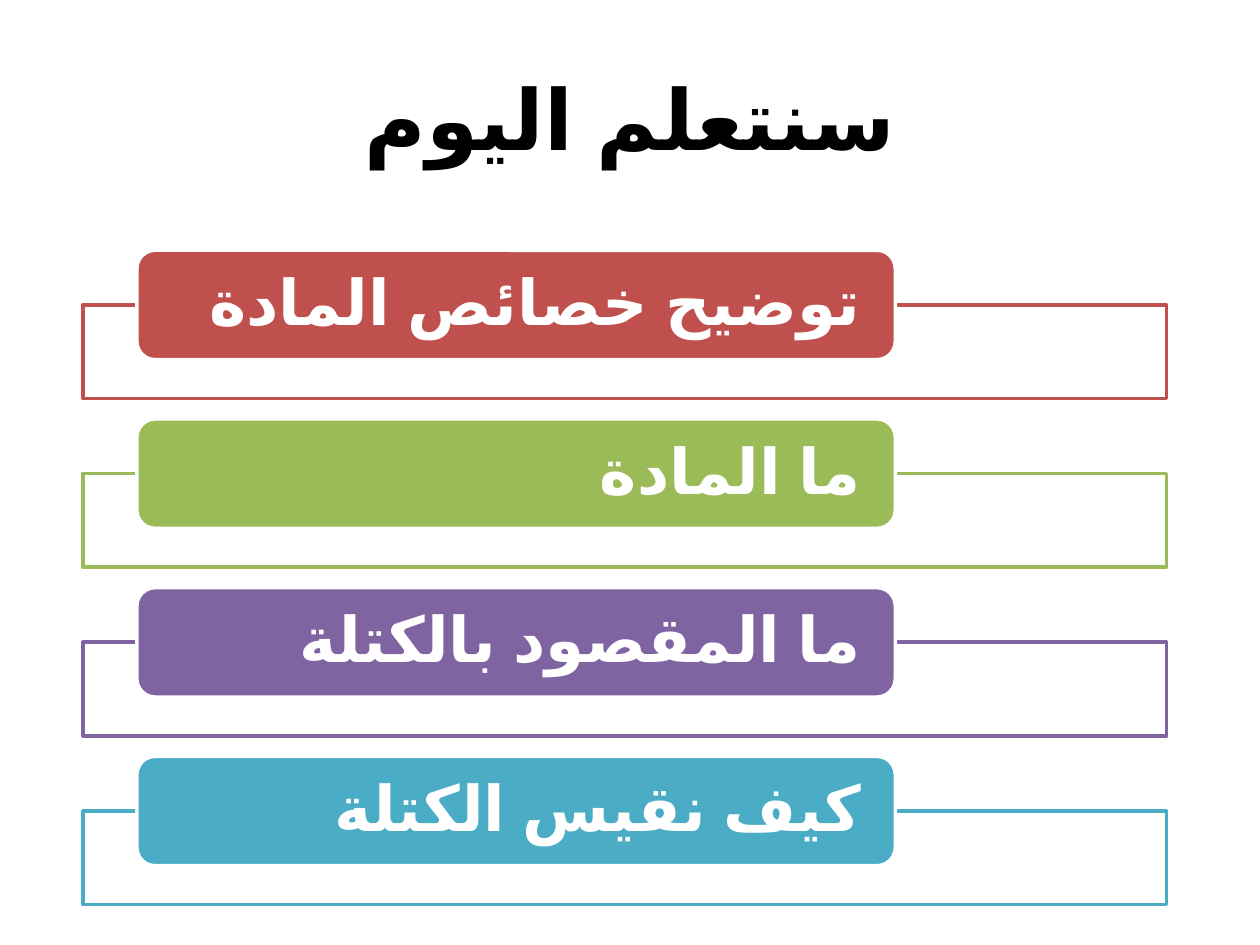
import pptx
import pptx.util
import pptx.dml.color
import pptx.enum.lang
import pptx.enum.shapes
import pptx.enum.text
import pptx.oxml.ns
import lxml.etree

Pt = pptx.util.Pt
RGB = pptx.dml.color.RGBColor
KIND = pptx.enum.shapes.MSO_SHAPE
ALIGN = pptx.enum.text.PP_ALIGN
qn = pptx.oxml.ns.qn

BLACK = RGB(0x00, 0x00, 0x00)
WHITE = RGB(0xFF, 0xFF, 0xFF)
RED = RGB(0xC0, 0x50, 0x4D)
GREEN = RGB(0x9B, 0xBB, 0x59)
PURPLE = RGB(0x80, 0x64, 0xA2)
TEAL = RGB(0x4B, 0xAC, 0xC6)


def write(shape, text, size, color, align, inset=7.2, edge=3.6, spacing=None):
    frame = shape.text_frame
    frame.word_wrap = True
    frame.vertical_anchor = pptx.enum.text.MSO_ANCHOR.MIDDLE
    frame.margin_left = frame.margin_right = Pt(inset)
    frame.margin_top = frame.margin_bottom = Pt(edge)
    para = frame.paragraphs[0]
    para.alignment = align
    para.line_spacing = spacing
    para._p.get_or_add_pPr().set("rtl", "1")
    run = para.add_run()
    run.text = text
    run.font.size = Pt(size)
    run.font.bold = True
    run.font.color.rgb = color
    run.font.name = "Calibri"
    run.font.language_id = pptx.enum.lang.MSO_LANGUAGE_ID.ARABIC


def block(kind, left, top, width, height, fill, line):
    shape = slide.shapes.add_shape(kind, Pt(left), Pt(top), Pt(width), Pt(height))
    shape.shadow.inherit = False
    shape.fill.solid()
    shape.fill.fore_color.rgb = fill
    shape.line.color.rgb = line
    shape.line.width = Pt(2)
    return shape


deck = pptx.Presentation()
deck.slide_width, deck.slide_height = Pt(720), Pt(540)
slide = deck.slides.add_slide(deck.slide_layouts[5])

title = slide.shapes.title
title.left, title.top, title.width, title.height = Pt(36), Pt(21.6), Pt(648), Pt(90)
write(title, "سنتعلم اليوم", size=48, color=BLACK, align=ALIGN.CENTER)

goals = [
    ("توضيح خصائص المادة", RED),
    ("ما المادة", GREEN),
    ("ما المقصود بالكتلة", PURPLE),
    ("كيف نقيس الكتلة", TEAL),
]
for row, (goal, color) in enumerate(goals):
    top = 143 + row * 96.4
    panel = block(KIND.RECTANGLE, 47.4, top + 31.2, 619.2, 53.5, WHITE, color)
    tint = panel._element.spPr.find(qn("a:solidFill"))[0]
    lxml.etree.SubElement(tint, qn("a:alpha")).set("val", "90000")
    label = block(KIND.ROUNDED_RECTANGLE, 78.2, top, 433.4, 62.5, color, WHITE)
    write(label, goal, size=36, color=WHITE, align=ALIGN.RIGHT,
          inset=16.4, edge=0, spacing=0.9)

deck.save("out.pptx")
